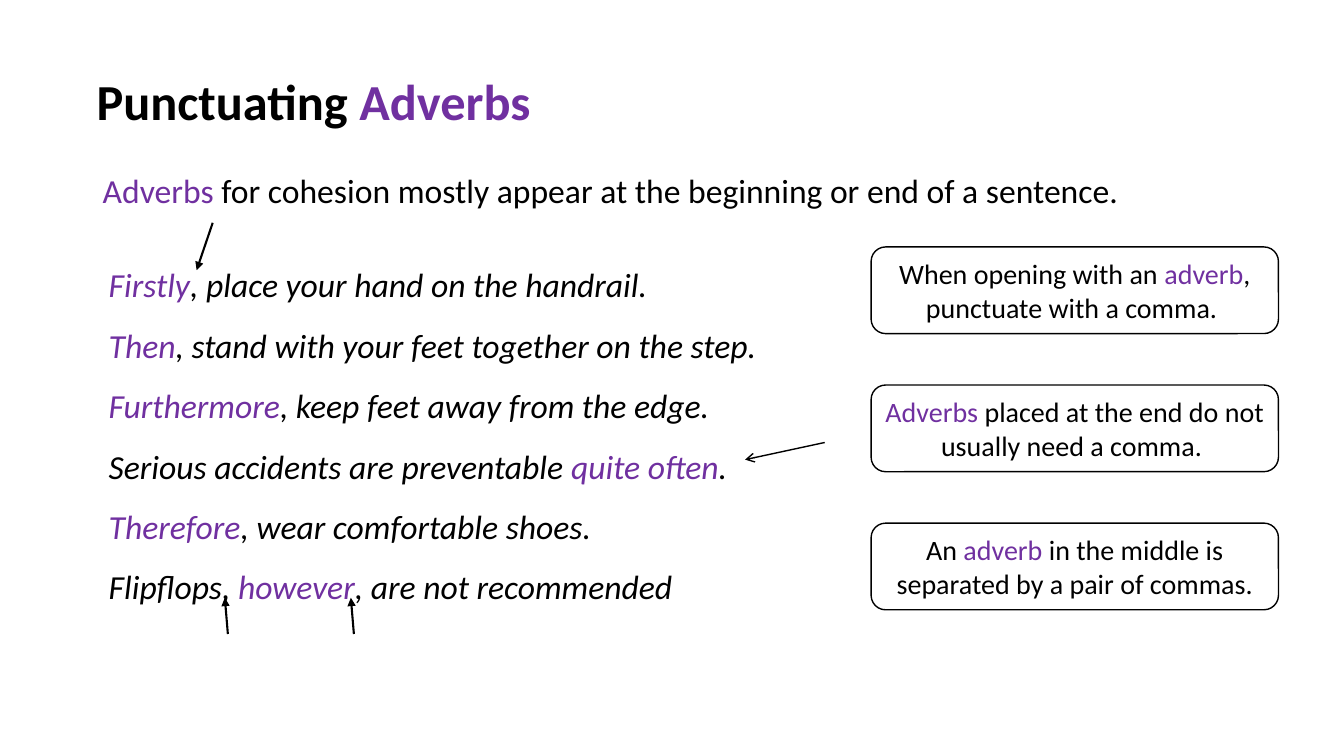
from lxml import etree
from pptx import Presentation
from pptx.dml.color import RGBColor
from pptx.enum.shapes import MSO_CONNECTOR, MSO_SHAPE
from pptx.enum.text import MSO_ANCHOR, PP_ALIGN
from pptx.oxml.ns import qn
from pptx.util import Emu, Pt

STRAIGHT = MSO_CONNECTOR.STRAIGHT
ROUNDED = MSO_SHAPE.ROUNDED_RECTANGLE
MIDDLE = MSO_ANCHOR.MIDDLE
CENTER = PP_ALIGN.CENTER

PX = 9144  # EMU per px, 100 px to the inch
FONT = "Calibri"
COLOURS = {"ink": "000000", "adverb": "7030A0", "paper": "FFFFFF"}

# Adverbs stand between asterisks
TITLE = "Punctuating *Adverbs*"
INTRO = "*Adverbs* for cohesion mostly appear at the beginning or end of a sentence."
EXAMPLES = [
    "*Firstly*, place your hand on the handrail.",
    "*Then*, stand with your feet together on the step.",
    "*Furthermore*, keep feet away from the edge.",
    "Serious accidents are preventable *quite often*.",
    "*Therefore*, wear comfortable shoes.",
    "Flipflops, *however*, are not recommended",
]
RULES = [
    "When opening with an *adverb*, punctuate with a comma. ",
    "*Adverbs* placed at the end do not usually need a comma. ",
    "An *adverb* in the middle is separated by a pair of commas.",
]
RULE_TOP, RULE_STEP = 245, 137


def px(length):
    return Emu(length * PX)


def colour(name):
    return RGBColor.from_string(COLOURS[name])


def write_line(para, marked_text, size, bold=False, italic=False):
    """Write one paragraph, colouring the parts between asterisks."""
    for index, part in enumerate(marked_text.split("*")):
        if not part:
            continue
        span = para.add_run()
        span.text = part
        span.font.name = FONT
        span.font.size = Pt(size)
        span.font.bold = bold
        span.font.italic = italic
        span.font.color.rgb = colour("adverb" if index % 2 else "ink")


def add_text(page, left, top, width, height, lines, size, spacing=1.0, **style):
    box = page.shapes.add_textbox(px(left), px(top), px(width), px(height))
    frame = box.text_frame
    frame.word_wrap = True
    for index, line in enumerate(lines):
        para = frame.add_paragraph() if index else frame.paragraphs[0]
        para.line_spacing = spacing
        write_line(para, line, size, **style)


def add_rule(page, top, rule):
    box = page.shapes.add_shape(ROUNDED, px(864), px(top), px(404), px(86))
    box.shadow.inherit = False
    box.fill.solid()
    box.fill.fore_color.rgb = colour("paper")
    box.line.color.rgb = colour("ink")
    box.line.width = Pt(1)
    frame = box.text_frame
    frame.word_wrap = True
    frame.vertical_anchor = MIDDLE
    frame.margin_left = frame.margin_right = px(9)
    para = frame.paragraphs[0]
    para.alignment = CENTER
    write_line(para, rule, 20)


def add_arrow(page, start, end, weight=1.5, head="triangle"):
    arrow = page.shapes.add_connector(STRAIGHT, *map(px, start + end))
    arrow.line.color.rgb = colour("ink")
    arrow.line.width = Pt(weight)
    etree.SubElement(arrow.line._get_or_add_ln(), qn("a:tailEnd"), type=head)
    etree.SubElement(arrow._element.spPr, qn("a:effectLst"))


def main():
    deck = Presentation()
    deck.slide_width, deck.slide_height = px(1333), px(750)
    page = deck.slides.add_slide(deck.slide_layouts[6])

    # Title, introduction and example sentences
    add_text(page, 86, 65, 1156, 71, [TITLE], 36, bold=True)
    add_text(page, 92, 144, 1122, 71, [INTRO], 24, spacing=1.5)
    add_text(page, 98, 237, 766, 374, EXAMPLES, 24, spacing=1.5, italic=True)

    # Punctuation rules on the right
    for index, rule in enumerate(RULES):
        add_rule(page, RULE_TOP + index * RULE_STEP, rule)

    # Arrows to the opening comma, the pair of commas and the sentence end
    add_arrow(page, (211, 221), (195, 268))
    for comma in (223, 348):
        add_arrow(page, (comma + 3, 629), (comma, 593))
    add_arrow(page, (818, 439), (739, 456), weight=1, head="arrow")

    deck.save("out.pptx")


if __name__ == "__main__":
    main()
